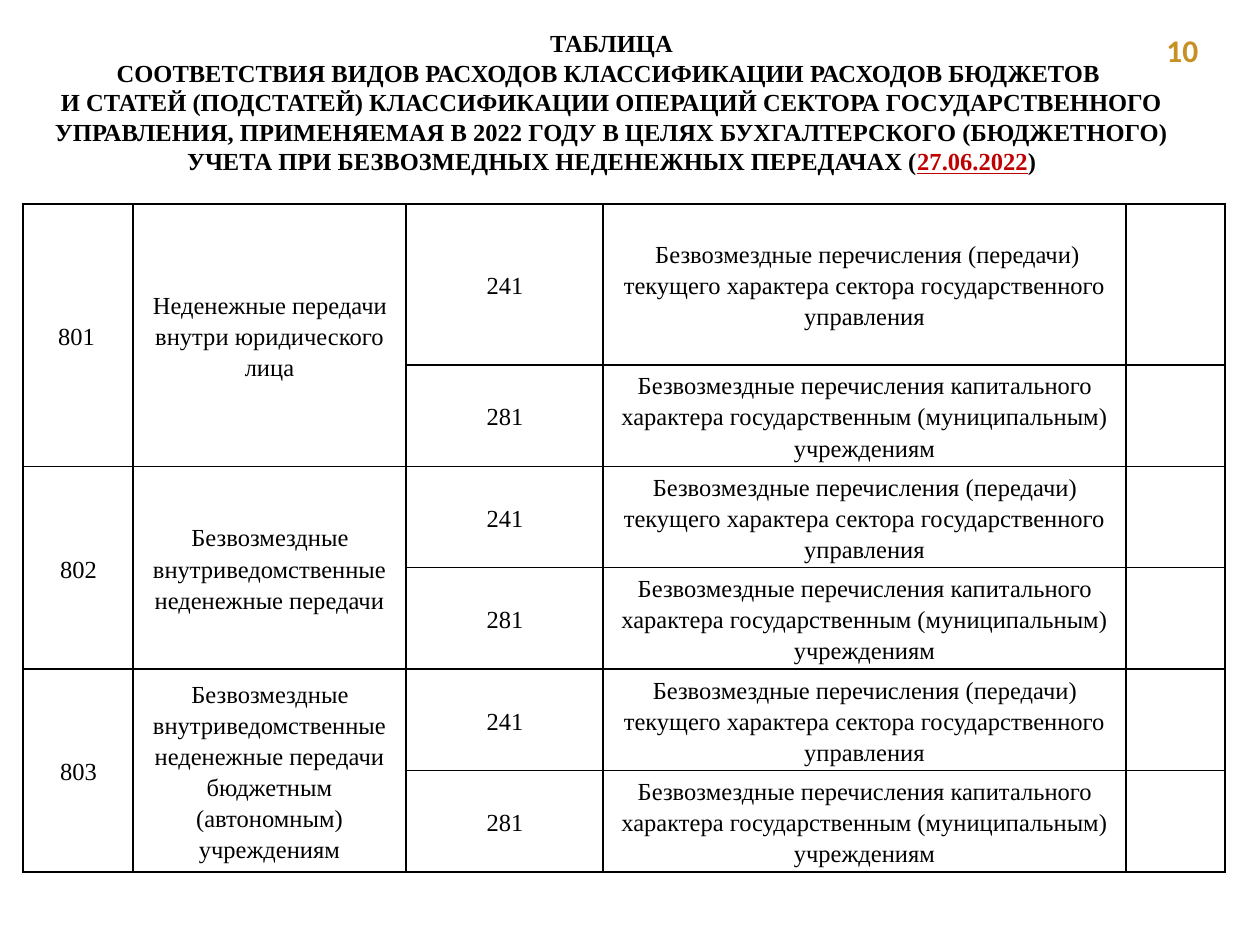
from lxml import etree
from pptx import Presentation
from pptx.dml.color import RGBColor
from pptx.enum.text import MSO_ANCHOR, MSO_AUTO_SIZE, PP_ALIGN
from pptx.oxml.ns import qn
from pptx.util import Pt

PX = 914400 / 126
CENTER, LEFT = PP_ALIGN.CENTER, PP_ALIGN.LEFT
TOP, MIDDLE = MSO_ANCHOR.TOP, MSO_ANCHOR.MIDDLE
NO_FIT = MSO_AUTO_SIZE.NONE
BLACK = RGBColor(0, 0, 0)
RED = RGBColor(0xC0, 0, 0)
GOLD = RGBColor(0xC7, 0x90, 0x23)
SERIF, SANS = "Times New Roman", "Calibri"

TITLE = [
    [("ТАБЛИЦА", BLACK)],
    [("СООТВЕТСТВИЯ ВИДОВ РАСХОДОВ КЛАССИФИКАЦИИ РАСХОДОВ БЮДЖЕТОВ ", BLACK)],
    [("И СТАТЕЙ (ПОДСТАТЕЙ) КЛАССИФИКАЦИИ ОПЕРАЦИЙ СЕКТОРА ГОСУДАРСТВЕННОГО "
      "УПРАВЛЕНИЯ, ПРИМЕНЯЕМАЯ В 2022 ГОДУ В ЦЕЛЯХ БУХГАЛТЕРСКОГО (БЮДЖЕТНОГО) "
      "УЧЕТА ПРИ БЕЗВОЗМЕДНЫХ НЕДЕНЕЖНЫХ ПЕРЕДАЧАХ (", BLACK),
     ("27.06.2022", RED), (")", BLACK)],
]
EXPENSES = [
    ("801", "Неденежные передачи внутри юридического лица"),
    ("802", "Безвозмездные внутриведомственные неденежные передачи"),
    ("803", "Безвозмездные внутриведомственные неденежные передачи "
            "бюджетным (автономным) учреждениям"),
]
OPERATIONS = [
    ("241", "Безвозмездные перечисления (передачи) текущего характера "
            "сектора государственного управления"),
    ("281", "Безвозмездные перечисления капитального характера "
            "государственным (муниципальным) учреждениям"),
]
COLUMNS = [110, 273, 197, 523, 99]
ROWS = [161] + [100] * 5


def px(n):
    """Turn pixels into EMU."""
    return round(n * PX)


def place(sp, x, y, w, h):
    """Set the position and size of a shape."""
    sp.left, sp.top, sp.width, sp.height = px(x), px(y), px(w), px(h)


def add_run(p, text, size, color, font=SERIF, bold=False, underline=False):
    """Append a formatted run to a paragraph."""
    r = p.add_run()
    r.text = text
    f = r.font
    f.name, f.size, f.bold, f.underline = font, Pt(size), bold, underline
    f.color.rgb = color


def add_title(s):
    """Fill the title placeholder."""
    sp = s.shapes.title
    place(sp, 23, 22, 1177, 161)
    tf = sp.text_frame
    tf.word_wrap, tf.auto_size, tf.vertical_anchor = True, NO_FIT, TOP
    for i, runs in enumerate(TITLE):
        p = tf.paragraphs[0] if i == 0 else tf.add_paragraph()
        p.alignment = CENTER
        for text, color in runs:
            add_run(p, text, 14, color, bold=True, underline=color == RED)


def add_page_number(s):
    """Add the page number box."""
    sp = s.shapes.add_textbox(px(1147), px(25), px(91), px(50))
    tf = sp.text_frame
    tf.word_wrap = True
    p = tf.paragraphs[0]
    p.alignment = LEFT
    add_run(p, " 10", 18, GOLD, SANS, bold=True)


def format_cell(cell):
    """Clear the fill, set the margins and draw the borders of a cell."""
    cell.fill.background()
    cell.vertical_anchor = MIDDLE
    cell.margin_left = cell.margin_right = px(4)
    cell.margin_top = cell.margin_bottom = 0
    tcPr = cell._tc.get_or_add_tcPr()
    for i, side in enumerate(("a:lnL", "a:lnR", "a:lnT", "a:lnB")):
        ln = etree.Element(qn(side), w=str(Pt(1)))
        fill = etree.SubElement(ln, qn("a:solidFill"))
        etree.SubElement(fill, qn("a:srgbClr"), val=str(BLACK))
        tcPr.insert(i, ln)


def write_cell(cell, text, indent=1):
    """Write centred text with a first-line indent into a cell."""
    p = cell.text_frame.paragraphs[0]
    p.alignment, p.line_spacing = CENTER, 1.15
    p._p.get_or_add_pPr().set("indent", str(px(indent)))
    add_run(p, text, 14, BLACK)


def add_expense_table(s):
    """Add the table that pairs expense types with operation codes."""
    table = s.shapes.add_table(len(ROWS), len(COLUMNS), px(23), px(204),
                               px(sum(COLUMNS)), px(sum(ROWS))).table
    table.first_row = table.horz_banding = False
    for column, w in zip(table.columns, COLUMNS):
        column.width = px(w)
    for row, h in zip(table.rows, ROWS):
        row.height = px(h)
    for cell in table.iter_cells():
        format_cell(cell)
    for i, expense in enumerate(EXPENSES):
        top = i * len(OPERATIONS)
        for col, text in enumerate(expense):
            cell = table.cell(top, col)
            cell.merge(table.cell(top + len(OPERATIONS) - 1, col))
            write_cell(cell, text)
        for row, (code, name) in enumerate(OPERATIONS, top):
            write_cell(table.cell(row, 2), code)
            write_cell(table.cell(row, 3), name, 6 if row == 0 else 1)
    table.cell(0, 0).margin_left = 0


def main():
    """Build the slide and save it."""
    prs = Presentation()
    prs.slide_width, prs.slide_height = px(1260), px(945)
    s = prs.slides.add_slide(prs.slide_layouts[5])
    add_title(s)
    add_page_number(s)
    add_expense_table(s)
    prs.save("out.pptx")


if __name__ == "__main__":
    main()
